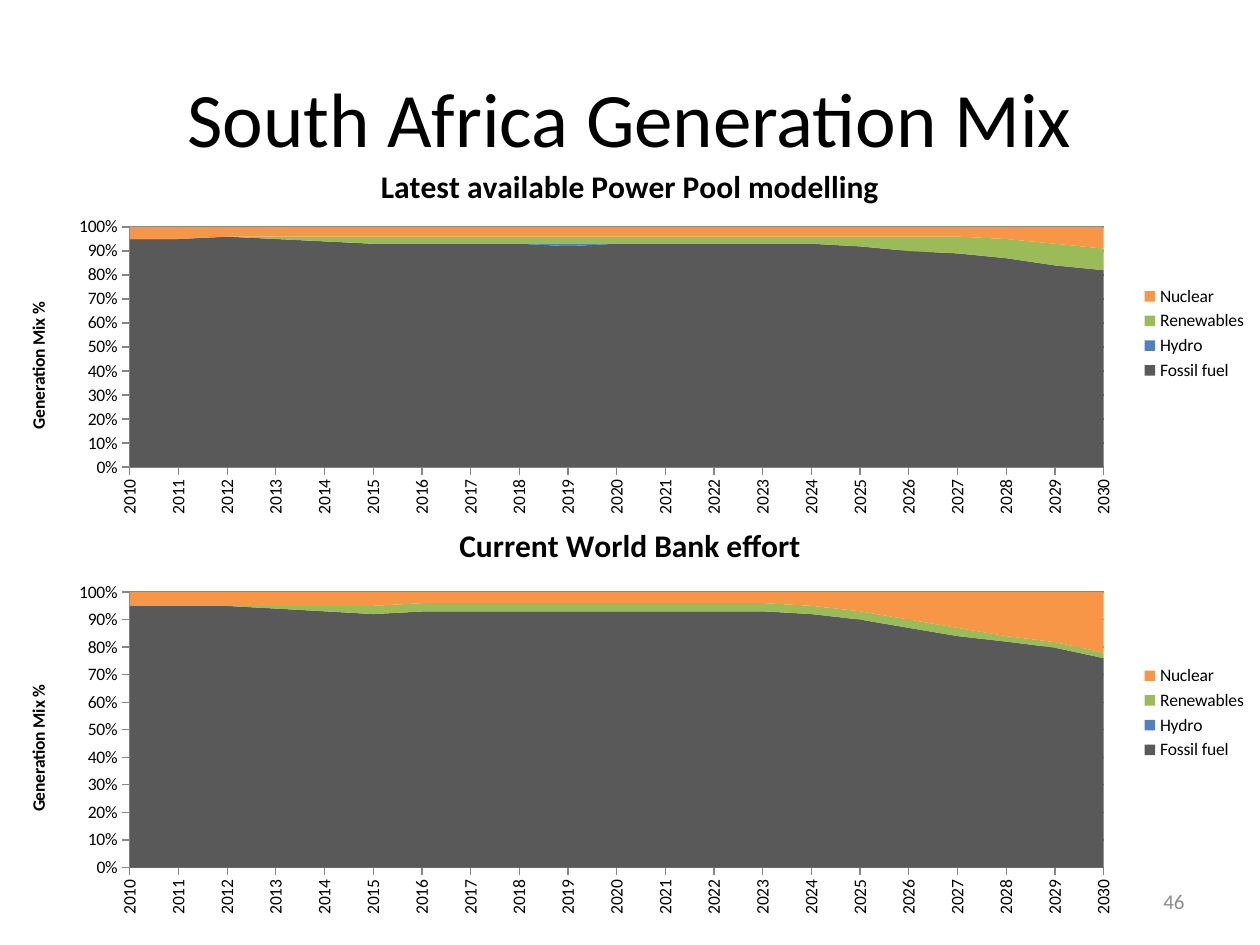
from pptx import Presentation
from pptx.chart.data import CategoryChartData
from pptx.dml.color import RGBColor
from pptx.enum.chart import XL_CHART_TYPE as ChartType, XL_LEGEND_POSITION as LegendPosition
from pptx.enum.chart import XL_TICK_MARK as TickMark
from pptx.enum.text import MSO_ANCHOR as Anchor, PP_ALIGN as Align
from pptx.oxml import parse_xml
from pptx.oxml.ns import nsdecls, qn
from pptx.util import Cm, Pt

FONT = "Calibri"
YEARS = [str(year) for year in range(2010, 2031)]
SOURCE_COLOURS = {"Fossil fuel": "595959", "Hydro": "4F81BD",
                  "Renewables": "9BBB59", "Nuclear": "F79646"}
POWER_POOL_MIX = [
    [95, 95, 95, 95, 94, 93, 93, 93, 93, 92, 93, 93, 93, 93, 93, 91, 90, 89, 87, 84, 82],
    [0] * 9 + [1] + [0] * 11,
    [0, 0, 0, 1, 2] + [3] * 10 + [4, 6, 7, 8, 9, 9],
    [5, 5] + [4] * 16 + [5, 7, 9],
]
BANK_MIX = [
    [95, 94, 94, 94, 93, 92, 92, 93, 93, 93, 93, 93, 93, 93, 92, 90, 87, 84, 82, 79, 76],
    [0] * 21,
    [0, 0, 0, 1, 2] + [3] * 13 + [2, 2, 2],
    [5] * 6 + [4] * 8 + [5, 7, 10, 13, 16, 18, 22],
]


def colour(hex_string):
    return RGBColor.from_string(hex_string)


def style_font(font, size, hex_string="000000", bold=False):
    font.name, font.size, font.bold = FONT, Pt(size), bold
    font.color.rgb = colour(hex_string)


def place(shape, left, top, width, height):
    shape.left, shape.top, shape.width, shape.height = map(Cm, (left, top, width, height))


def write_text(shape, text, size, hex_string, align):
    frame = shape.text_frame
    frame.word_wrap = True
    frame.vertical_anchor = Anchor.MIDDLE
    frame.text = text
    frame.paragraphs[0].alignment = align
    style_font(frame.paragraphs[0].runs[0].font, size, hex_string)


def write_chart_title(title, text, size):
    title.text_frame.text = text
    style_font(title.text_frame.paragraphs[0].runs[0].font, size, bold=True)


def set_plot_area(chart, x, y, w, h):
    """Fix the inner plot area, in fractions of the chart."""
    plot_area = chart._chartSpace.chart.plotArea
    for layout in plot_area.findall(qn("c:layout")):
        plot_area.remove(layout)
    sizes = "".join(f'<c:{tag} val="{value}"/>' for tag, value in zip("xywh", (x, y, w, h)))
    plot_area.insert(0, parse_xml(
        f'<c:layout {nsdecls("c")}><c:manualLayout><c:layoutTarget val="inner"/>'
        f'<c:xMode val="edge"/><c:yMode val="edge"/>{sizes}</c:manualLayout></c:layout>'))


def style_axes(chart):
    years, share = chart.category_axis, chart.value_axis
    for axis in (years, share):
        axis.major_tick_mark = TickMark.OUTSIDE
        axis.minor_tick_mark = TickMark.NONE
        axis.format.line.color.rgb = colour("868686")
        style_font(axis.tick_labels.font, 10)
    years.has_major_gridlines = False
    label_body = years._element.find(qn("c:txPr")).find(qn("a:bodyPr"))
    label_body.set("rot", "-5400000")
    label_body.set("vert", "horz")

    share.minimum_scale, share.maximum_scale, share.major_unit = 0, 1, 0.1
    share.tick_labels.number_format = "0%"
    share.tick_labels.number_format_is_linked = False
    share.has_major_gridlines = True
    share.major_gridlines.format.line.color.rgb = colour("868686")
    share._element.find(qn("c:crossBetween")).set("val", "midCat")
    write_chart_title(share.axis_title, "Generation Mix %", 10)


def add_mix_chart(slide, title, mix, top, height, plot_top, plot_height):
    data = CategoryChartData()
    data.categories = YEARS
    for source, values in zip(SOURCE_COLOURS, mix):
        data.add_series(source, values)
    chart = slide.shapes.add_chart(ChartType.AREA_STACKED_100, 0, Cm(top),
                                   Cm(25.4), Cm(height), data).chart
    style_font(chart.font, 10)
    chart.has_title = True
    write_chart_title(chart.chart_title, title, 18)
    chart.has_legend = True
    chart.legend.position = LegendPosition.RIGHT
    chart.legend.include_in_layout = False
    style_font(chart.legend.font, 10)

    chart.plots[0].vary_by_categories = False
    for series in chart.plots[0].series:
        series.format.fill.solid()
        series.format.fill.fore_color.rgb = colour(SOURCE_COLOURS[series.name])
    style_axes(chart)
    set_plot_area(chart, 0.103, plot_top, 0.773, plot_height)


def main():
    deck = Presentation()
    deck.slide_width, deck.slide_height = Cm(25.4), Cm(19.05)
    slide = deck.slides.add_slide(deck.slide_layouts[5])

    heading = slide.shapes.title
    place(heading, 1.27, 0.76, 22.86, 3.18)
    write_text(heading, "South Africa Generation Mix", 44, "000000", Align.CENTER)

    add_mix_chart(slide, "Latest available Power Pool modelling", POWER_POOL_MIX,
                  2.92, 7.6, 0.218, 0.637)
    add_mix_chart(slide, "Current World Bank effort", BANK_MIX,
                  10.13, 8.48, 0.213, 0.655)

    page_number = slide.shapes.add_textbox(0, 0, 0, 0)
    place(page_number, 18.2, 17.65, 5.93, 1.02)
    write_text(page_number, "46", 12, "8C8C8C", Align.RIGHT)
    deck.save("out.pptx")


if __name__ == "__main__":
    main()
